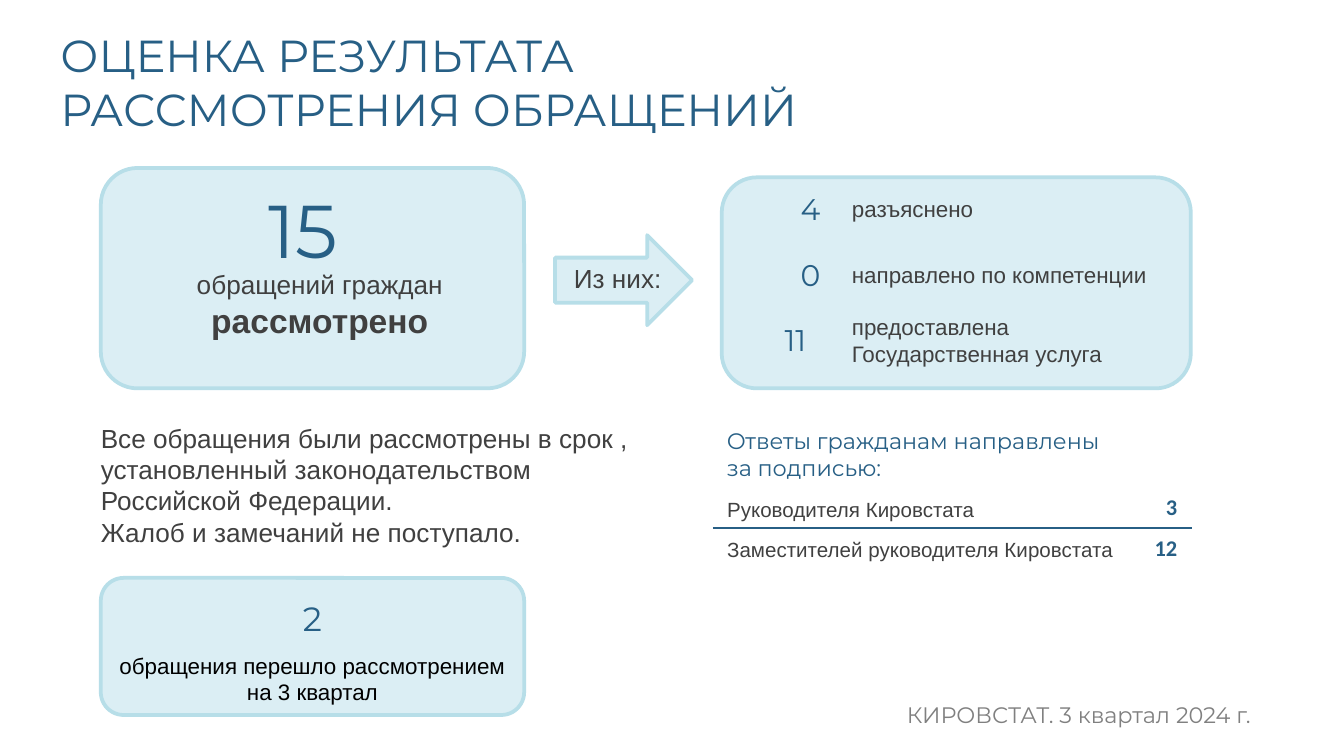
from dataclasses import dataclass
from lxml.etree import SubElement as Sub
from pptx import Presentation
from pptx.dml.color import RGBColor as RGB
from pptx.enum.shapes import MSO_SHAPE as SHAPE
from pptx.enum.text import MSO_ANCHOR as ANCHOR, PP_ALIGN as ALIGN
from pptx.oxml.ns import qn
from pptx.util import Inches, Pt


@dataclass(frozen=True)
class Theme:
    blue: str = "275F85"
    dark: str = "404040"
    black: str = "000000"
    grey: str = "808080"
    fill: str = "DBEEF4"
    edge: str = "B7DEE8"
    head: str = "Montserrat"
    body: str = "Arial"
    digit: str = "Calibri"
    huge: int = 40
    title: int = 24
    large: int = 18
    count: int = 16
    main: int = 14
    small: int = 12
    tiny: int = 11


T = Theme()


def write(frame, *paras, size=T.main, font=T.body, color=T.dark,
          bold=False, align=ALIGN.LEFT):
    """Add paragraphs, filling the empty first one; \\n breaks a line."""
    for text in paras:
        para = frame.paragraphs[0]
        if para.runs:
            para = frame.add_paragraph()
        para.alignment = align
        for i, line in enumerate(text.split("\n")):
            if i > 0:
                para.add_line_break()
            run = para.add_run()
            run.text = line
            run.font.size, run.font.name = Pt(size), font
            run.font.bold = bold
            run.font.color.rgb = RGB.from_string(color)


def label(slide, box, *paras, inset=True, middle=False, **style):
    frame = slide.shapes.add_textbox(*map(Inches, box)).text_frame
    frame.word_wrap = True
    if middle:
        frame.vertical_anchor = ANCHOR.MIDDLE
    if not inset:
        frame.margin_left = frame.margin_right = 0
        frame.margin_top = frame.margin_bottom = 0
    write(frame, *paras, **style)
    return frame


def panel(slide, kind, box):
    shape = slide.shapes.add_shape(kind, *map(Inches, box))
    shape.shadow.inherit = False
    shape.fill.solid()
    shape.fill.fore_color.rgb = RGB.from_string(T.fill)
    shape.line.color.rgb = RGB.from_string(T.edge)
    shape.line.width = Pt(2)


def border(cell, side):
    line = Sub(cell._tc.get_or_add_tcPr(), qn(f"a:{side}"), w=str(Pt(1)))
    fill = Sub(line, qn("a:solidFill"))
    Sub(fill, qn("a:srgbClr"), val=T.blue)


def signers(slide, rows):
    high = 0.3
    box = (5.31, 3.63, 3.55, high * len(rows))
    table = slide.shapes.add_table(len(rows), 2, *map(Inches, box)).table
    table.first_row = table.horz_banding = False
    for col, wide in zip(table.columns, (3.17, 0.38)):
        col.width = Inches(wide)
    looks = (dict(size=T.tiny),
             dict(size=T.small, font=T.digit, color=T.blue, bold=True,
                  align=ALIGN.RIGHT))
    for r, row in enumerate(rows):
        table.rows[r].height = Inches(high)
        for c, text in enumerate(row):
            cell = table.cell(r, c)
            cell.vertical_anchor = ANCHOR.BOTTOM
            write(cell.text_frame, text, **looks[c])
            # Rule between rows only; borders precede the fill
            if r > 0:
                border(cell, "lnT")
            if r < len(rows) - 1:
                border(cell, "lnB")
            cell.fill.background()


def main():
    deck = Presentation()
    deck.slide_width = Inches(10)
    deck.slide_height = deck.slide_width * 9 // 16
    slide = deck.slides.add_slide(deck.slide_layouts[6])
    accent = dict(font=T.head, color=T.blue)

    # Panels and arrow
    panel(slide, SHAPE.RIGHT_ARROW, (4.13, 1.75, 1.02, 0.67))
    panel(slide, SHAPE.ROUNDED_RECTANGLE, (5.37, 1.32, 3.49, 1.57))
    panel(slide, SHAPE.ROUNDED_RECTANGLE, (0.75, 1.25, 3.15, 1.64))
    panel(slide, SHAPE.ROUNDED_RECTANGLE, (0.75, 4.3, 3.15, 1.02))

    # Title
    label(slide, (0.45, 0.21, 9.27, 0.9),
          "ОЦЕНКА РЕЗУЛЬТАТА\nРАССМОТРЕНИЯ ОБРАЩЕНИЙ",
          inset=False, size=T.title, **accent)

    # Total
    label(slide, (1.9, 1.32, 0.95, 0.77), "15", size=T.huge, **accent)
    total = label(slide, (1.33, 1.95, 2.1, 0.65), "обращений граждан",
                  align=ALIGN.CENTER)
    write(total, "рассмотрено", size=T.large, bold=True, align=ALIGN.CENTER)
    label(slide, (4.27, 1.95, 0.75, 0.24), "Из них:", inset=False)

    # Outcomes
    items = (("4", 5.86, "разъяснено"),
             ("0", 5.86, "направлено по компетенции"),
             ("11", 5.74, "предоставлена\nГосударственная услуга"))
    for i, (count, left, text) in enumerate(items):
        top = 1.3 + 0.49 * i
        label(slide, (left, top, 0.5, 0.5), count, middle=True,
              size=T.count, **accent)
        label(slide, (6.24, top, 2.55, 0.5), text, middle=True, size=T.small)

    # Deadline note
    label(slide, (0.75, 3.14, 4.21, 0.95),
          "Все обращения были рассмотрены в срок ,"
          "\nустановленный законодательством\nРоссийской Федерации."
          "\nЖалоб и замечаний не поступало.", inset=False)

    # Carried over
    label(slide, (0.75, 4.38, 3.15, 0.44), "2", middle=True,
          size=T.large, align=ALIGN.CENTER, **accent)
    label(slide, (0.75, 4.8, 3.15, 0.5), "обращения перешло рассмотрением",
          "на 3 квартал", size=T.small, color=T.black, align=ALIGN.CENTER)

    # Signers
    label(slide, (5.31, 3.13, 3.94, 0.5),
          "Ответы гражданам направлены\nза подписью:", size=T.small, **accent)
    signers(slide, (("Руководителя Кировстата", "3"),
                    ("Заместителей руководителя Кировстата", "12")))

    # Footer
    label(slide, (6.65, 5.17, 3.1, 0.3), "КИРОВСТАТ. 3 квартал 2024 г.",
          size=T.small, font=T.head, color=T.grey)
    deck.save("out.pptx")


if __name__ == "__main__":
    main()
